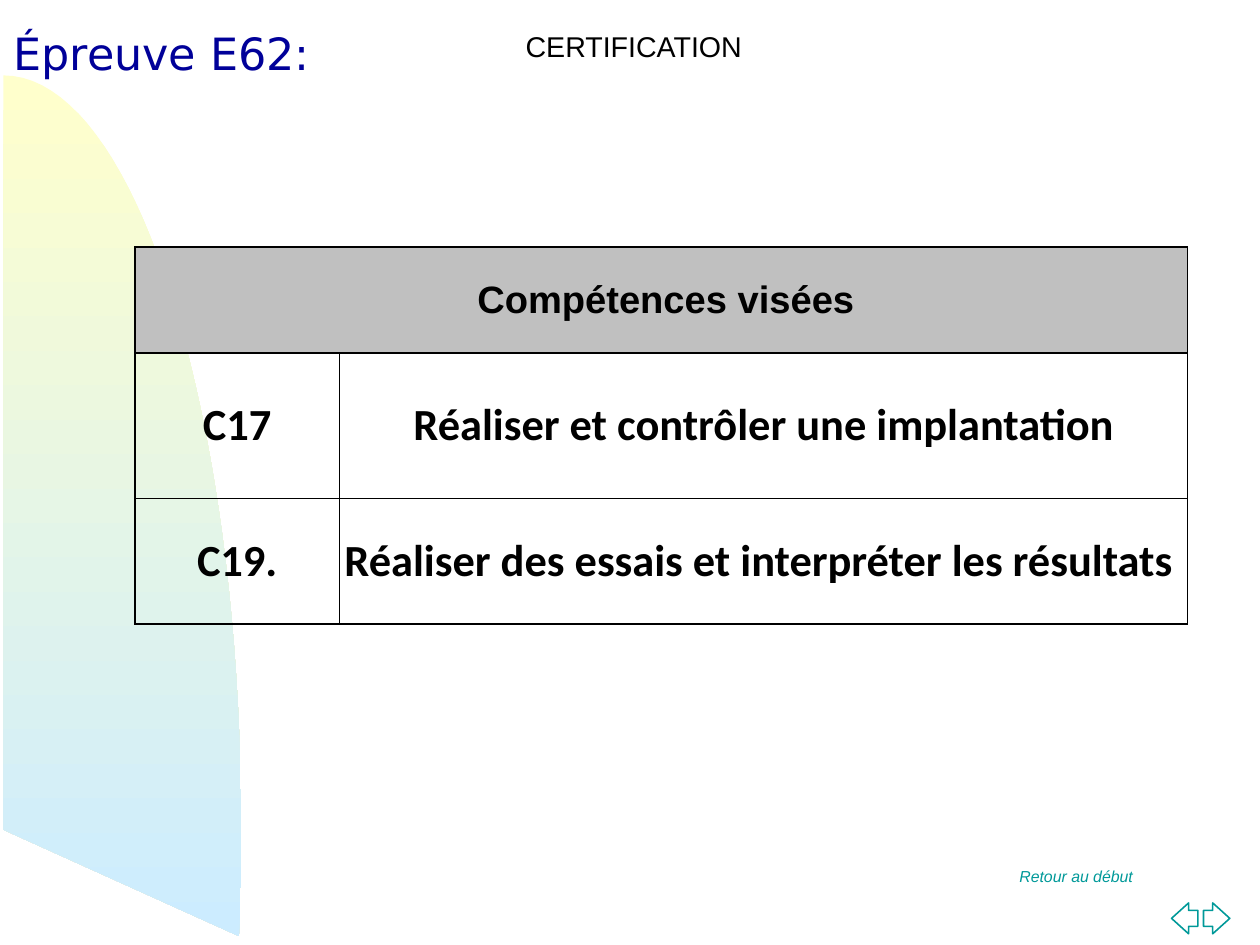
from lxml.etree import SubElement
from pptx import Presentation
from pptx.dml.color import RGBColor
from pptx.enum.shapes import MSO_SHAPE
from pptx.enum.text import MSO_ANCHOR, PP_ALIGN
from pptx.oxml.ns import qn
from pptx.util import Inches, Pt

CM_PER_INCH = 2.54
COMPETENCES = [("C17", "Réaliser et contrôler une implantation"),
               ("C19.", "Réaliser des essais et interpréter les résultats ")]


def color(hex_code):
    """Return the RGB colour of a hex string."""
    return RGBColor.from_string(hex_code)


def set_text(tf, text, size=18, font="Arial", fill="000000", bold=False,
             italic=False, align=PP_ALIGN.CENTER, before=0):
    """Write one formatted paragraph into a text frame."""
    p = tf.paragraphs[0]
    p.alignment = align
    p.space_before = Pt(before)
    r = p.add_run()
    r.text = text
    r.font.size = Pt(size)
    r.font.name = font
    r.font.bold = bold
    r.font.italic = italic
    r.font.color.rgb = color(fill)


def add_label(s, text, x, y, w, h, wrap=True, margins=(0.1, 0.05),
              anchor=MSO_ANCHOR.TOP, **fmt):
    """Add a text box."""
    tf = s.shapes.add_textbox(Inches(x), Inches(y), Inches(w), Inches(h)).text_frame
    tf.word_wrap = wrap
    tf.vertical_anchor = anchor
    tf.margin_left = tf.margin_right = Inches(margins[0])
    tf.margin_top = tf.margin_bottom = Inches(margins[1])
    set_text(tf, text, **fmt)


def bezier(points, steps=40):
    """Return points along a cubic curve, in EMU, without its start."""
    curve = []
    for i in range(1, steps + 1):
        t = i / steps
        weights = ((1 - t) ** 3, 3 * t * (1 - t) ** 2, 3 * t * t * (1 - t), t ** 3)
        curve.append(tuple(Inches(sum(k * pt[axis] for k, pt in zip(weights, points)))
                           for axis in (0, 1)))
    return curve


def add_sail(s):
    """Add the curved gradient shape on the left edge."""
    top, side, tip = (0.03, 0.66), (2.11, 7.26), (2.09, 8.19)
    outline = bezier([top, (1.18, 0.66), (2.11, 3.62), side])
    outline += bezier([side, (2.11, 7.57), (2.11, 7.88), tip], 8)
    outline.append((Inches(0.03), Inches(7.26)))
    fb = s.shapes.build_freeform(Inches(top[0]), Inches(top[1]))
    fb.add_line_segments(outline, close=True)
    sp = fb.convert_to_shape()
    sp.shadow.inherit = False
    sp.line.fill.background()
    sp.fill.gradient()
    sp.fill.gradient_angle = 270
    for stop, hex_code, position in zip(sp.fill.gradient_stops, ("FFFFCC", "CCECFF"), (0, 1)):
        stop.color.rgb = color(hex_code)
        stop.position = position


def add_arrow(s, kind, x):
    """Add an outlined navigation arrow."""
    sp = s.shapes.add_shape(kind, Inches(x), Inches(7.9), Inches(0.23), Inches(0.27))
    sp.shadow.inherit = False
    sp.adjustments[0] = 0.52
    sp.adjustments[1] = 0.65
    sp.fill.solid()
    sp.fill.fore_color.rgb = color("FFFFFF")
    sp.line.color.rgb = color("009999")
    sp.line.width = Pt(1)


def format_cell(cell, fill=None):
    """Set the margins, borders and fill of a table cell."""
    cell.vertical_anchor = MSO_ANCHOR.MIDDLE
    cell.margin_left = cell.margin_right = Inches(0.03)
    cell.margin_top = cell.margin_bottom = 0
    tcPr = cell._tc.get_or_add_tcPr()
    for side in ("lnL", "lnR", "lnT", "lnB"):
        ln = SubElement(tcPr, qn(f"a:{side}"), w=str(Pt(1)))
        SubElement(SubElement(ln, qn("a:solidFill")), qn("a:srgbClr"), val="000000")
    if fill:
        cell.fill.solid()
        cell.fill.fore_color.rgb = color(fill)
    else:
        cell.fill.background()


def add_competences(s):
    """Add the table of competences."""
    table = s.shapes.add_table(3, 2, Inches(1.18), Inches(2.16),
                               Inches(9.21), Inches(3.3)).table
    table.first_row = table.horz_banding = False
    for column, width in zip(table.columns, (1.79, 7.42)):
        column.width = Inches(width)
    for row, height in zip(table.rows, (0.93, 1.27, 1.1)):
        row.height = Inches(height)
    header = table.cell(0, 0)
    header.merge(table.cell(0, 1))
    for cell in table.rows[0].cells:
        format_cell(cell, "C0C0C0")
    header.margin_left = Inches(0.11)
    set_text(header.text_frame, "Compétences visées", size=24, bold=True)
    for i, texts in enumerate(COMPETENCES, 1):
        for cell, text in zip(table.rows[i].cells, texts):
            format_cell(cell)
            set_text(cell.text_frame, text, size=28, font="Calibri", bold=True)


def main():
    """Build the slide and save it."""
    prs = Presentation()
    prs.slide_width = Inches(28 / CM_PER_INCH)
    prs.slide_height = Inches(21 / CM_PER_INCH)
    s = prs.slides.add_slide(prs.slide_layouts[6])
    add_sail(s)
    add_label(s, "Retour au début", 8.82, 7.53, 1.85, 0.73, size=10,
              fill="009999", italic=True, align=PP_ALIGN.LEFT, before=2.5)
    add_arrow(s, MSO_SHAPE.LEFT_ARROW, 10.25)
    add_arrow(s, MSO_SHAPE.RIGHT_ARROW, 10.53)
    add_label(s, "Épreuve E62:", -0.08, 0.06, 2.99, 0.81, margins=(0, 0),
              anchor=MSO_ANCHOR.MIDDLE, size=28, font="DejaVu Sans",
              fill="000099", before=12)
    add_competences(s)
    add_label(s, "CERTIFICATION", 4.49, 0.2, 2.11, 0.4, wrap=False)
    prs.save("out.pptx")


if __name__ == "__main__":
    main()
